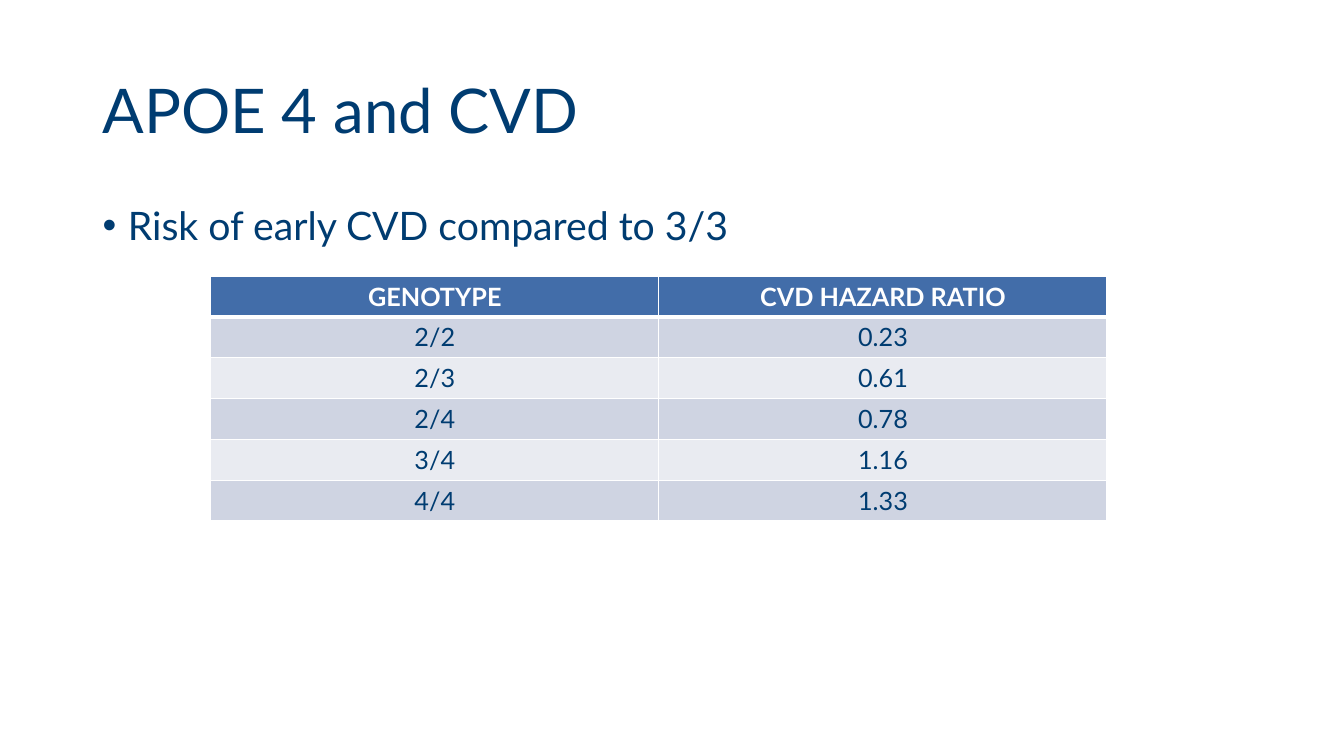
from lxml.etree import SubElement
from pptx import Presentation
from pptx.dml.color import RGBColor
from pptx.enum.text import MSO_ANCHOR, PP_ALIGN
from pptx.oxml.ns import qn
from pptx.util import Inches, Pt

NAVY, WHITE, HEADER_BLUE = "003C71", "FFFFFF", "426DA9"
BANDS = ("CFD4E2", "E9EBF1")
HAZARD_RATIOS = (
    ("GENOTYPE", "CVD HAZARD RATIO"),
    ("2/2", "0.23"),
    ("2/3", "0.61"),
    ("2/4", "0.78"),
    ("3/4", "1.16"),
    ("4/4", "1.33"),
)


def color(hex_value):
    return RGBColor.from_string(hex_value)


def write(paragraph, text, hex_value, **font_format):
    paragraph.text = text
    font = paragraph.font
    font.color.rgb = color(hex_value)
    for name, value in {"name": "Lato", **font_format}.items():
        setattr(font, name, value)


def add_text(slide, box, text, size, anchor):
    shape = slide.shapes.add_textbox(*map(Inches, box))
    frame = shape.text_frame
    frame.word_wrap = True
    frame.vertical_anchor = anchor
    paragraph = frame.paragraphs[0]
    paragraph.line_spacing = 0.9
    write(paragraph, text, NAVY, size=Pt(size))
    return paragraph


def add_title(slide, box):
    add_text(slide, box, "APOE 4 and CVD", 44, MSO_ANCHOR.MIDDLE)


def add_body(slide, box):
    paragraph = add_text(slide, box, "Risk of early CVD compared to 3/3", 28, MSO_ANCHOR.TOP)
    # Hanging bullet
    properties = paragraph._p.get_or_add_pPr()
    properties.set("marL", str(Inches(0.25)))
    properties.set("indent", str(-Inches(0.25)))
    bullet_font = properties.makeelement(qn("a:buFont"), {"typeface": "Arial"})
    bullet = properties.makeelement(qn("a:buChar"), {"char": "•"})
    position = len(properties.findall(qn("a:lnSpc")))
    properties.insert(position, bullet_font)
    properties.insert(position + 1, bullet)


def add_border(cell, side, width):
    properties = cell._tc.get_or_add_tcPr()
    line = SubElement(properties, qn(f"a:ln{side}"), w=str(Pt(width)))
    SubElement(SubElement(line, qn("a:solidFill")), qn("a:srgbClr"), val=WHITE)


def add_hazard_table(slide, box):
    row_count, column_count = len(HAZARD_RATIOS), len(HAZARD_RATIOS[0])
    frame = slide.shapes.add_table(row_count, column_count, *map(Inches, box))
    table = frame.table
    for row_index, values in enumerate(HAZARD_RATIOS):
        is_header = row_index == 0
        fill = HEADER_BLUE if is_header else BANDS[(row_index - 1) % 2]
        for column_index, value in enumerate(values):
            cell = table.cell(row_index, column_index)
            # A thicker line separates the header from the data
            widths = {"L": 1, "R": 1, "T": 3 if row_index == 1 else 1, "B": 3 if is_header else 1}
            for side, width in widths.items():
                add_border(cell, side, width)
            cell.fill.solid()
            cell.fill.fore_color.rgb = color(fill)
            paragraph = cell.text_frame.paragraphs[0]
            paragraph.alignment = PP_ALIGN.CENTER
            write(paragraph, value, WHITE if is_header else NAVY, size=Pt(18), bold=is_header)


def main():
    presentation = Presentation()
    presentation.slide_width, presentation.slide_height = Inches(13.33), Inches(7.5)
    slide = presentation.slides.add_slide(presentation.slide_layouts[6])
    slide.background.fill.solid()
    slide.background.fill.fore_color.rgb = color(WHITE)

    # Title and body share the same side margins
    left, width = 0.92, 11.5
    add_title(slide, (left, 0.4, width, 1.45))
    add_body(slide, (left, 2, width, 4.76))
    add_hazard_table(slide, (2.09, 2.74, 8.89, 2.43))
    presentation.save("out.pptx")


if __name__ == "__main__":
    main()
